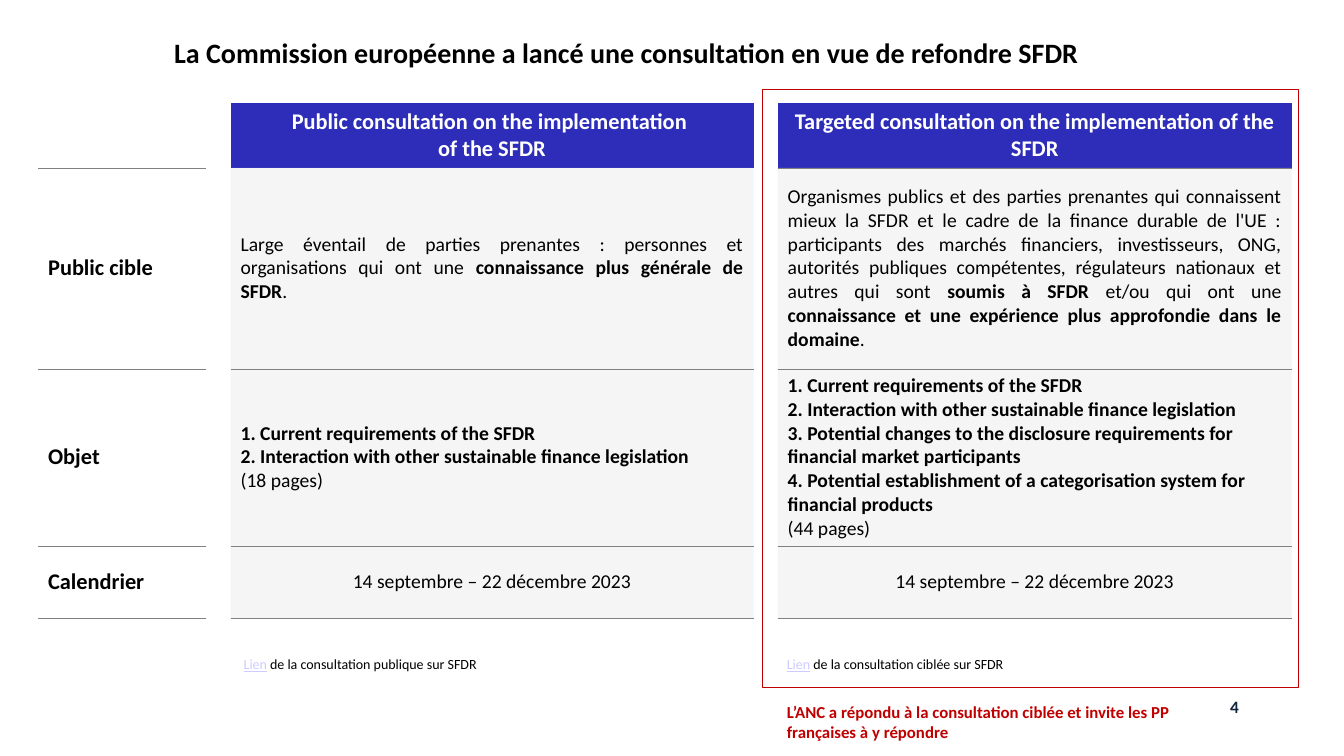
from dataclasses import dataclass

from lxml import etree
from pptx import Presentation
from pptx.dml.color import RGBColor
from pptx.enum import shapes, text
from pptx.oxml import ns
from pptx.util import Pt


@dataclass(frozen=True)
class Theme:
    font: str = "Calibri"
    black: str = "000000"
    white: str = "FFFFFF"
    blue: str = "2D2DB9"
    grey: str = "E6E6E6"
    rule: str = "808080"
    red: str = "C00000"
    link: str = "CCCCFF"
    navy: str = "0F243E"
    title: float = 20
    heading: float = 16
    body: float = 14
    callout: float = 12
    number: float = 12.4
    note: float = 10


THEME = Theme()
LEFT, CENTER = text.PP_ALIGN.LEFT, text.PP_ALIGN.CENTER
RIGHT, JUSTIFY = text.PP_ALIGN.RIGHT, text.PP_ALIGN.JUSTIFY
NO_STYLE = "{2D5ABB26-0587-4C30-8999-92F81FD0307C}"

COLUMN_WIDTHS = [120.24, 16.8, 373.6, 16.8, 367.2]
ROW_HEIGHTS = [45, 143.5, 125.5, 52]
LABELS = ["Public cible", "Objet", "Calendrier"]
HEADINGS = [
    ["Public consultation on the implementation ", "of the SFDR"],
    ["Targeted consultation on the implementation of the SFDR"],
]
AUDIENCES = [
    ["Large éventail de parties prenantes : personnes et organisations qui ont une ",
     "connaissance plus générale de SFDR", "."],
    ["Organismes publics et des parties prenantes qui connaissent mieux la SFDR et le cadre "
     "de la finance durable de l'UE : participants des marchés financiers, investisseurs, ONG, "
     "autorités publiques compétentes, régulateurs nationaux et autres qui sont ",
     "soumis à SFDR ", "et/ou qui ont une ",
     "connaissance et une expérience plus approfondie dans le domaine", "."],
]
TOPICS = [
    "1. Current requirements of the SFDR",
    "2. Interaction with other sustainable finance legislation",
    "3. Potential changes to the disclosure requirements for financial market participants",
    "4. Potential establishment of a categorisation system for financial products",
]
SCOPES = [(TOPICS[:2], "(18 pages)"), (TOPICS, "(44 pages)")]
PERIOD = "14 septembre – 22 décembre 2023"


def add_run(paragraph, words, size, color=THEME.black, bold=False, underline=False):
    run = paragraph.add_run()
    run.text = words
    run.font.name = THEME.font
    run.font.size = Pt(size)
    run.font.bold = bold
    run.font.underline = underline
    run.font.color.rgb = RGBColor.from_string(color)


def write(frame, paragraphs, size, color=THEME.black, align=LEFT):
    for index, runs in enumerate(paragraphs):
        paragraph = frame.add_paragraph() if index else frame.paragraphs[0]
        paragraph.alignment = align
        for words, bold in runs:
            add_run(paragraph, words, size, color, bold)


def add_box(slide, box):
    frame = slide.shapes.add_textbox(*map(Pt, box)).text_frame
    frame.word_wrap = True
    return frame


def draw_title(slide, box):
    frame = add_box(slide, box)
    frame.margin_left = frame.margin_right = frame.margin_top = frame.margin_bottom = 0
    headline = "La Commission européenne a lancé une consultation en vue de refondre SFDR"
    write(frame, [[(headline, True)]], THEME.title, align=CENTER)


def fill_cell(cell, color, opacity=100):
    cell.fill.solid()
    cell.fill.fore_color.rgb = RGBColor.from_string(color)
    if opacity < 100:
        tint = next(cell._tc.tcPr.iter(ns.qn("a:srgbClr")))
        etree.SubElement(tint, ns.qn("a:alpha"), val=str(opacity * 1000))


def rule_cell(cell, sides):
    properties = cell._tc.get_or_add_tcPr()
    for position, side in enumerate(sides):
        line = etree.Element(ns.qn(f"a:ln{side}"), w=str(Pt(0.25)))
        solid = etree.SubElement(line, ns.qn("a:solidFill"))
        etree.SubElement(solid, ns.qn("a:srgbClr"), val=THEME.rule)
        properties.insert(position, line)


def draw_consultation(table, column, heading, audience, scope):
    topics, pages = scope
    head, audience_cell, scope_cell, period_cell = [
        table.cell(row, column) for row in range(len(ROW_HEIGHTS))]
    fill_cell(head, THEME.blue)
    for cell in (audience_cell, scope_cell, period_cell):
        fill_cell(cell, THEME.grey, 40)
    write(head.text_frame, [[(line, True)] for line in heading],
          THEME.heading, THEME.white, CENTER)
    audience_runs = [(words, index % 2 == 1) for index, words in enumerate(audience)]
    write(audience_cell.text_frame, [audience_runs], THEME.body, align=JUSTIFY)
    write(scope_cell.text_frame, [[(topic, True)] for topic in topics] + [[(pages, False)]],
          THEME.body)
    write(period_cell.text_frame, [[(PERIOD, False)]], THEME.body, align=CENTER)


def draw_comparison(slide, left, top):
    frame = slide.shapes.add_table(
        len(ROW_HEIGHTS), len(COLUMN_WIDTHS), Pt(left), Pt(top),
        Pt(sum(COLUMN_WIDTHS)), Pt(sum(ROW_HEIGHTS)))
    table = frame.table
    table.first_row = table.horz_banding = False
    next(frame._element.iter(ns.qn("a:tableStyleId"))).text = NO_STYLE
    for column, width in zip(table.columns, COLUMN_WIDTHS):
        column.width = Pt(width)
    for row, height in zip(table.rows, ROW_HEIGHTS):
        row.height = Pt(height)
    for cell in table.iter_cells():
        cell.vertical_anchor = text.MSO_ANCHOR.MIDDLE

    for row, label in enumerate(LABELS, start=1):
        write(table.cell(row, 0).text_frame, [[(label, True)]], THEME.heading)
    for column, *content in zip((2, 4), HEADINGS, AUDIENCES, SCOPES):
        draw_consultation(table, column, *content)
    for row in range(len(ROW_HEIGHTS)):
        for gap in (1, 3):
            if (row, gap) != (0, 1):
                fill_cell(table.cell(row, gap), THEME.white)
        for column in (0, 2, 4):
            sides = "TB" if row else "B"
            if column == 2 and row < 2:
                sides = "B" * row
            rule_cell(table.cell(row, column), sides)


def draw_highlight(slide, box):
    highlight = slide.shapes.add_shape(shapes.MSO_SHAPE.RECTANGLE, *map(Pt, box))
    highlight.shadow.inherit = False
    highlight.fill.background()
    highlight.line.color.rgb = RGBColor.from_string(THEME.red)
    highlight.line.width = Pt(0.75)


def draw_link_note(slide, box, consultation):
    note = add_box(slide, box).paragraphs[0]
    add_run(note, "Lien", THEME.note, THEME.link, underline=True)
    add_run(note, f" de la consultation {consultation} sur SFDR", THEME.note)


def draw_footer(slide, callout_box, number_box):
    callout = "L’ANC a répondu à la consultation ciblée et invite les PP françaises à y répondre"
    write(add_box(slide, callout_box), [[(callout, True)]], THEME.callout, THEME.red)
    write(add_box(slide, number_box), [[("4", True)]], THEME.number, THEME.navy, RIGHT)


def main():
    deck = Presentation()
    deck.slide_width, deck.slide_height = Pt(960), Pt(540)
    slide = deck.slides.add_slide(deck.slide_layouts[6])
    draw_comparison(slide, 27.2, 73.5)
    draw_link_note(slide, (167, 465, 258, 19.5), "publique")
    draw_link_note(slide, (555, 465, 258, 19.5), "ciblée")
    draw_title(slide, (32.4, 25.2, 830, 42))
    draw_highlight(slide, (545, 64, 382.5, 427))
    draw_footer(slide, (555, 497.5, 301, 36), (692, 494, 200, 36))
    deck.save("out.pptx")


if __name__ == "__main__":
    main()
